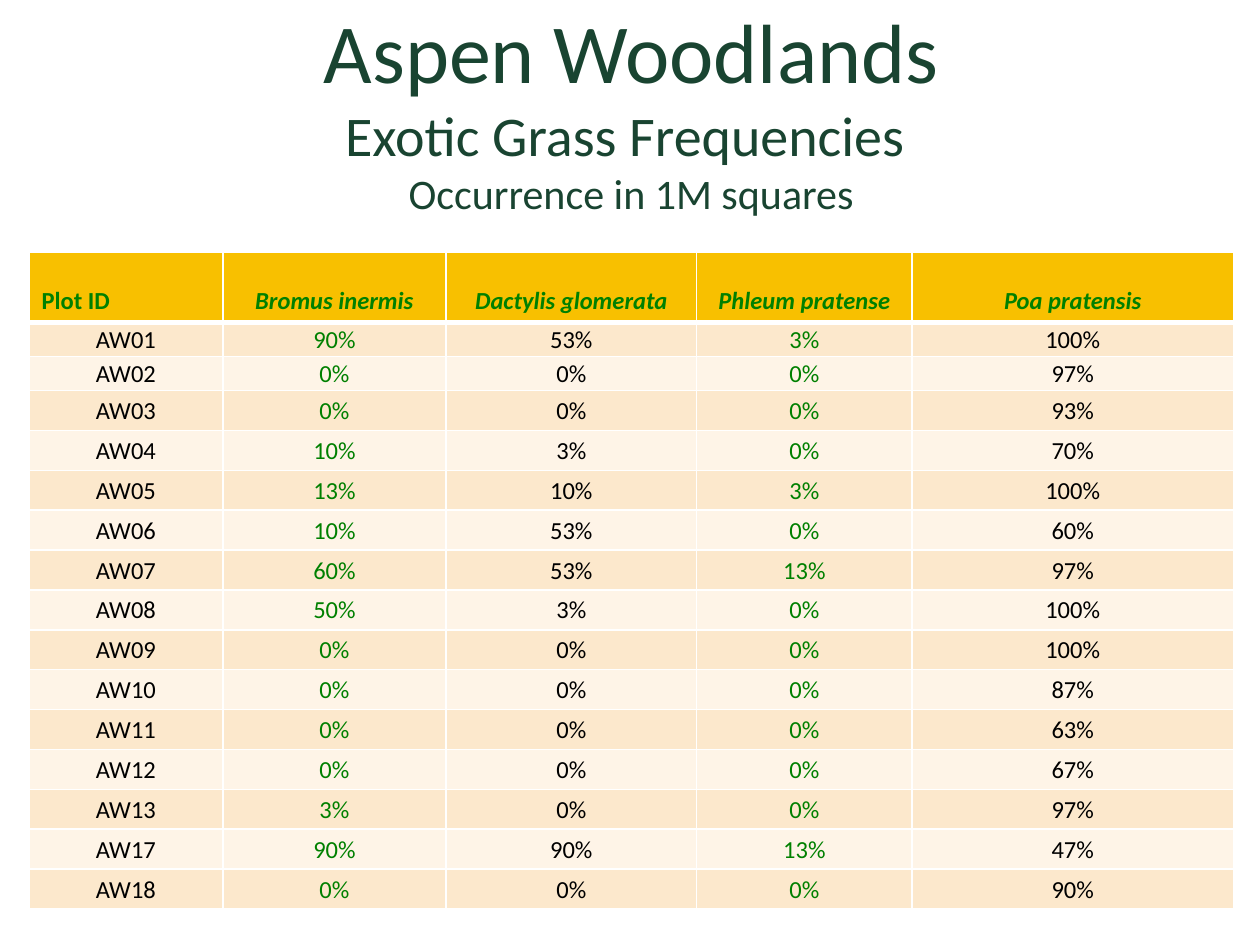
"""Build the Aspen Woodlands exotic grass frequency slide."""
import pptx
import pptx.dml.color
import pptx.enum.text
import pptx.oxml
import pptx.oxml.ns
import pptx.util

Inches, Pt = pptx.util.Inches, pptx.util.Pt
RGB = pptx.dml.color.RGBColor.from_string
PP_ALIGN = pptx.enum.text.PP_ALIGN
MSO_ANCHOR = pptx.enum.text.MSO_ANCHOR

COLORS = {"title": "194431", "green": "008000", "black": "000000", "header": "F8C000",
          "odd": "FCE8CC", "even": "FEF4E7", "border": "FFFFFF"}
TITLE_LINES = [("Aspen Woodlands", 48), ("Exotic Grass Frequencies ", 32),
               ("Occurrence in 1M squares", 24)]
HEADERS = ["Plot ID", "Bromus inermis", "Dactylis glomerata", "Phleum pratense", "Poa pratensis"]
FREQUENCIES = {
    "AW01": (90, 53, 3, 100),
    "AW02": (0, 0, 0, 97),
    "AW03": (0, 0, 0, 93),
    "AW04": (10, 3, 0, 70),
    "AW05": (13, 10, 3, 100),
    "AW06": (10, 53, 0, 60),
    "AW07": (60, 53, 13, 97),
    "AW08": (50, 3, 0, 100),
    "AW09": (0, 0, 0, 100),
    "AW10": (0, 0, 0, 87),
    "AW11": (0, 0, 0, 63),
    "AW12": (0, 0, 0, 67),
    "AW13": (3, 0, 0, 97),
    "AW17": (90, 90, 13, 47),
    "AW18": (0, 0, 0, 90),
}
COL_WIDTHS = [1.54, 1.77, 1.99, 1.71, 2.55]
TABLE_HEIGHT, HEADER_HEIGHT, SHORT_HEIGHT, SHORT_ROWS = 5.22, 0.56, 0.27, 2


def set_borders(cell, bottom):
    tcPr = cell._tc.get_or_add_tcPr()
    for i, (side, width) in enumerate([("L", 1), ("R", 1), ("T", 1), ("B", bottom)]):
        tcPr.insert(i, pptx.oxml.parse_xml(
            f'<a:ln{side} {pptx.oxml.ns.nsdecls("a")} w="{Pt(width)}"><a:solidFill>'
            f'<a:srgbClr val="{COLORS["border"]}"/></a:solidFill></a:ln{side}>'))


prs = pptx.Presentation()
prs.slide_width, prs.slide_height = Inches(10), Inches(7.5)
s = prs.slides.add_slide(prs.slide_layouts[5])

title = s.shapes.title
title.left, title.top, title.width, title.height = map(Inches, (0.23, 0.09, 9.56, 1.55))
tf = title.text_frame
tf.auto_size = pptx.enum.text.MSO_AUTO_SIZE.NONE
tf.vertical_anchor = MSO_ANCHOR.MIDDLE
p = tf.paragraphs[0]
p.alignment = PP_ALIGN.CENTER
p.font.name = "Calibri"
for i, (text, size) in enumerate(TITLE_LINES):
    if i:
        p.add_line_break()
    r = p.add_run()
    r.text = text
    r.font.size = Pt(size)
    r.font.name = "Calibri"
    r.font.color.rgb = RGB(COLORS["title"])

rows = [HEADERS] + [[plot] + [f"{v}%" for v in values] for plot, values in FREQUENCIES.items()]
table = s.shapes.add_table(len(rows), len(HEADERS), Inches(0.23), Inches(2),
                           Inches(sum(COL_WIDTHS)), Inches(TABLE_HEIGHT)).table
for column, width in zip(table.columns, COL_WIDTHS):
    column.width = Inches(width)

tall_rows = len(FREQUENCIES) - SHORT_ROWS
tall_height = (TABLE_HEIGHT - HEADER_HEIGHT - SHORT_ROWS * SHORT_HEIGHT) / tall_rows
heights = [HEADER_HEIGHT] + [SHORT_HEIGHT] * SHORT_ROWS + [tall_height] * tall_rows

for i, (row, height) in enumerate(zip(rows, heights)):
    table.rows[i].height = Inches(height)
    header = i == 0
    fill = "header" if header else "odd" if i % 2 else "even"
    for j, text in enumerate(row):
        cell = table.cell(i, j)
        cell.text = text
        cell.vertical_anchor = MSO_ANCHOR.BOTTOM if header else MSO_ANCHOR.MIDDLE
        if not header:
            cell.margin_left = cell.margin_right = cell.margin_top = Inches(0.01)
            cell.margin_bottom = 0
        cell.fill.solid()
        cell.fill.fore_color.rgb = RGB(COLORS[fill])
        set_borders(cell, 3 if header else 1)
        p = cell.text_frame.paragraphs[0]
        p.alignment = PP_ALIGN.LEFT if header and j == 0 else PP_ALIGN.CENTER
        p.font.name = "Calibri"
        p.font.size = Pt(14)
        p.font.bold = header
        p.font.italic = header and j > 0
        p.font.color.rgb = RGB(COLORS["green" if header or j % 2 else "black"])

prs.save("out.pptx")
